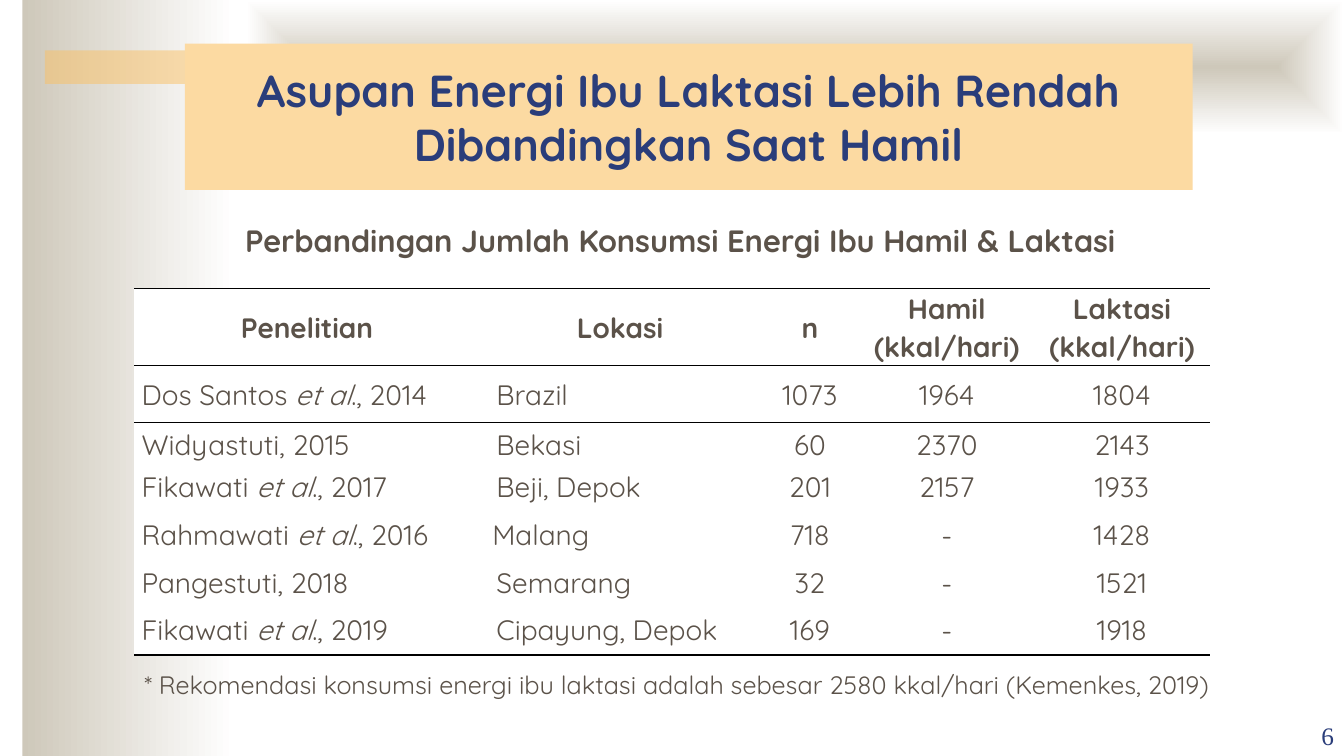
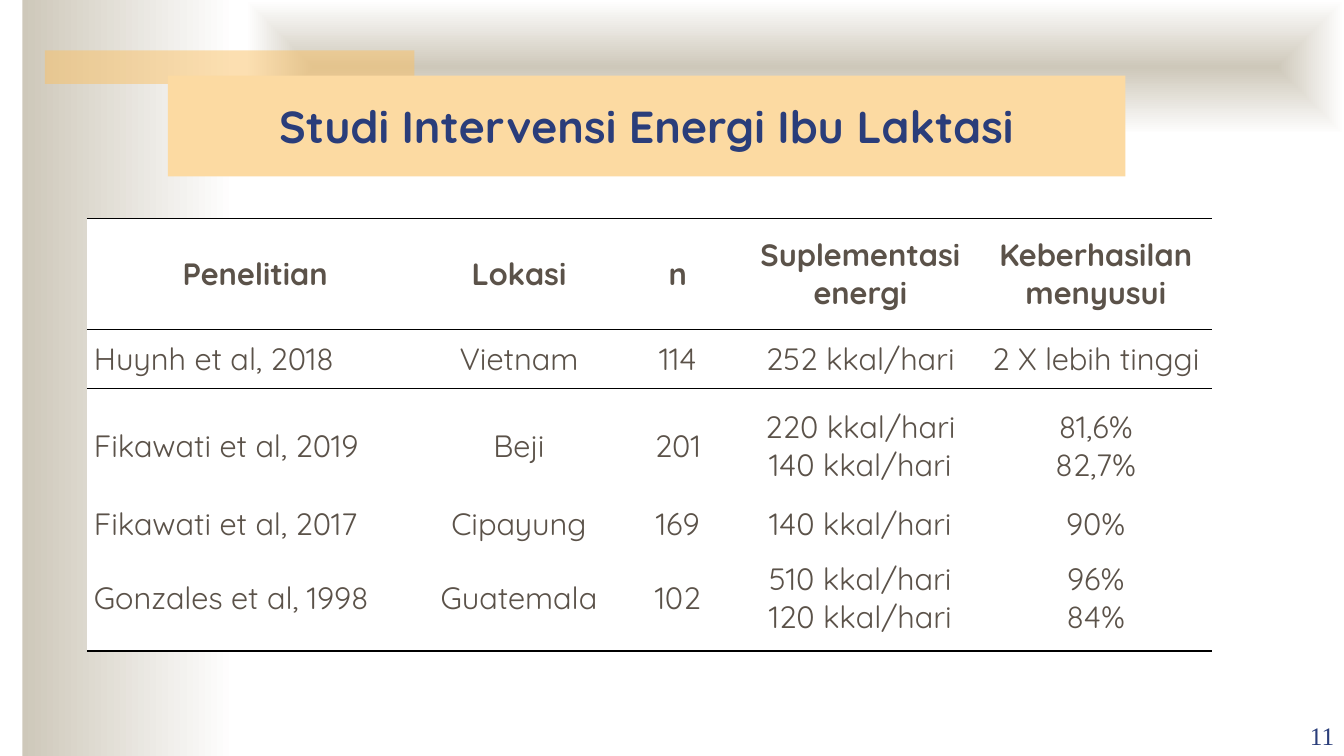
import dataclasses

import pptx
import pptx.dml.color
import pptx.enum.shapes
import pptx.enum.text
import pptx.oxml.ns
import pptx.util
from lxml import etree

RGBColor = pptx.dml.color.RGBColor
Align = pptx.enum.text.PP_ALIGN
Anchor = pptx.enum.text.MSO_ANCHOR
qn = pptx.oxml.ns.qn

# The slide is a grid of 160 columns by 90 rows of square modules
COLUMNS, ROWS = 160, 90
MODULE = pptx.util.Pt(6)

STONE = RGBColor(0xCE, 0xC8, 0xBA)
AMBER = RGBColor(0xFA, 0xC1, 0x64)
PEACH = RGBColor(0xFC, 0xDA, 0xA2)
NAVY = RGBColor(0x2A, 0x3D, 0x7A)
BROWN = RGBColor(0x5B, 0x52, 0x49)
BLACK = RGBColor(0, 0, 0)
WHITE = RGBColor(0xFF, 0xFF, 0xFF)

BODY_FONT = "Quicksand"
NUMBER_FONT = "Times New Roman"
NO_TABLE_STYLE = "{2D5ABB26-0587-4C30-8999-92F81FD0307C}"


@dataclasses.dataclass
class Box:
    left: float
    top: float
    width: float
    height: float

    def place(self):
        return [modules(n) for n in (self.left, self.top, self.width, self.height)]


@dataclasses.dataclass
class Column:
    share: float
    side_inset: float = 0
    align: int = Align.CENTER
    indent: float = 0


def modules(count):
    return pptx.util.Emu(round(count * MODULE))


def add_span(para, text, size, color, font=BODY_FONT, bold=False, italic=False):
    span = para.add_run()
    span.text = text
    span.font.name = font
    span.font.size = pptx.util.Pt(size)
    span.font.color.rgb = color
    span.font.bold = bold
    span.font.italic = italic


def add_band(page, box):
    band = page.shapes.add_shape(pptx.enum.shapes.MSO_SHAPE.RECTANGLE, *box.place())
    band.shadow.inherit = False
    band.line.fill.background()
    return band


def add_solid_band(page, box, color):
    band = add_band(page, box)
    band.fill.solid()
    band.fill.fore_color.rgb = color
    return band


def add_fading_band(page, box):
    band = add_band(page, box)
    band.fill.gradient()
    band.fill.gradient_angle = 0
    for stop, color in zip(band.fill.gradient_stops, (STONE, WHITE)):
        stop.color.rgb = color
    return band


def add_label(page, box, text, size, color, font=BODY_FONT, bold=False,
              align=Align.LEFT, anchor=Anchor.TOP, wrap=True):
    label = page.shapes.add_textbox(*box.place())
    label.text_frame.word_wrap = wrap
    label.text_frame.vertical_anchor = anchor
    para = label.text_frame.paragraphs[0]
    para.alignment = align
    add_span(para, text, size, color, font, bold)


def draw_backdrop(page):
    # Side band fades to the right, top band fades out from its middle
    add_fading_band(page, Box(2.67, 0, 25.33, ROWS))
    top_band = add_fading_band(page, Box(29.33, 0, COLUMNS - 29.33, 16))
    gradient = top_band._element.spPr.find(qn("a:gradFill"))
    gradient.remove(gradient.find(qn("a:lin")))
    outline = etree.SubElement(gradient, qn("a:path"), {"path": "shape"})
    etree.SubElement(outline, qn("a:fillToRect"), dict.fromkeys("ltrb", "50000"))

    # Translucent accent bar
    bar = add_solid_band(page, Box(5.33, 6, 44, 4), AMBER)
    tint = bar._element.spPr.find(qn("a:solidFill"))[0]
    etree.SubElement(tint, qn("a:alpha"), {"val": "50000"})


def draw_title(page, box, text):
    banner = add_solid_band(page, box, PEACH)
    banner.text_frame.word_wrap = True
    banner.text_frame.vertical_anchor = Anchor.MIDDLE
    para = banner.text_frame.paragraphs[0]
    para.alignment = Align.CENTER
    add_span(para, text, 32, NAVY, bold=True)


def draw_page_number(page, number):
    add_label(page, Box(COLUMNS - 16, ROWS - 6, 16, 6), str(number), 18, NAVY,
              font=NUMBER_FONT, align=Align.RIGHT, anchor=Anchor.BOTTOM)


def rule_cell(cell, sides):
    """Draw black one-point rules on the given sides (T, B, in this order)."""
    properties = cell._tc.get_or_add_tcPr()
    for position, side in enumerate(sides):
        line = etree.Element(qn(f"a:ln{side}"), {"w": str(pptx.util.Pt(1))})
        fill = etree.SubElement(line, qn("a:solidFill"))
        etree.SubElement(fill, qn("a:srgbClr"), {"val": str(BLACK)})
        properties.insert(position, line)


def fill_cell(cell, text, column, size, spacing, header, indent):
    cell.fill.solid()
    cell.fill.fore_color.rgb = WHITE
    cell.vertical_anchor = Anchor.MIDDLE
    cell.margin_left = cell.margin_right = modules(column.side_inset)
    cell.margin_top = cell.margin_bottom = 0
    for number, line in enumerate(text.split("\n")):
        frame = cell.text_frame
        para = frame.add_paragraph() if number else frame.paragraphs[0]
        para.alignment = Align.CENTER if header else column.align
        para.line_spacing = spacing
        if indent and not header:
            para._p.get_or_add_pPr().set("marL", str(modules(indent)))
        # Text between asterisks is italic
        for part, words in enumerate(line.split("*")):
            add_span(para, words, size, BROWN, bold=header, italic=part % 2 == 1)


def draw_study_table(page, box, columns, heights, rows, size, spacing, indents=None):
    frame = page.shapes.add_table(len(rows), len(columns), *box.place())
    table = frame.table
    table.first_row = table.horz_banding = False
    table._tbl.tblPr.find(qn("a:tableStyleId")).text = NO_TABLE_STYLE

    # Columns and rows share out the box
    total_width = sum(column.share for column in columns)
    for grid_column, column in zip(table.columns, columns):
        grid_column.width = modules(box.width * column.share / total_width)
    for grid_row, height in zip(table.rows, heights):
        grid_row.height = modules(box.height * height / sum(heights))

    # Rules above and below the header, and below the last row
    rules = {0: "TB", 1: "T", len(rows) - 1: "B"}
    for r, row in enumerate(rows):
        for c, (text, column) in enumerate(zip(row, columns)):
            cell = table.cell(r, c)
            indent = (indents or {}).get((r, c), column.indent)
            fill_cell(cell, text, column, size, spacing, r == 0, indent)
            rule_cell(cell, rules.get(r, ""))


def start_page(deck, title_box, title, number):
    page = deck.slides.add_slide(deck.slide_layouts[6])
    draw_backdrop(page)
    draw_title(page, title_box, title)
    draw_page_number(page, number)
    return page


def build_intake_page(deck):
    page = start_page(deck, Box(22, 5.2, 120, 17.4),
                      "Asupan Energi Ibu Laktasi Lebih Rendah Dibandingkan Saat Hamil", 6)
    add_label(page, Box(28, 25.8, 106.6, 5.6),
              "Perbandingan Jumlah Konsumsi Energi Ibu Hamil & Laktasi",
              22, BROWN, bold=True, wrap=False)
    columns = [
        Column(3.43, 0.85, Align.LEFT),
        Column(2.79, 0, Align.LEFT, indent=2),
        Column(0.98),
        Column(1.74, 0.85),
        Column(1.74, 0.85),
    ]
    rows = [
        ("Penelitian", "Lokasi", "n", "Hamil\n(kkal/hari)", "Laktasi\n(kkal/hari)"),
        ("Dos Santos *et al*., 2014", "Brazil", "1073", "1964", "1804"),
        ("Widyastuti, 2015", "Bekasi", "60", "2370", "2143"),
        ("Fikawati *et al*., 2017", "Beji, Depok", "201", "2157", "1933"),
        ("Rahmawati *et al*., 2016", "Malang", "718", "-", "1428"),
        ("Pangestuti, 2018", "Semarang", "32", "-", "1521"),
        ("Fikawati *et al*., 2019", "Cipayung, Depok", "169", "-", "1918"),
    ]
    heights = [0.77, 0.57, 0.42, 0.42, 0.53, 0.42, 0.52]
    draw_study_table(page, Box(16, 34.3, 128, 43.7), columns, heights, rows,
                     size=20, spacing=1.07, indents={(4, 1): 1.5})
    add_label(page, Box(16, 79, 138, 5),
              "* Rekomendasi konsumsi energi ibu laktasi adalah sebesar "
              "2580 kkal/hari (Kemenkes, 2019)",
              18, BROWN, anchor=Anchor.MIDDLE)


def build_intervention_page(deck):
    page = start_page(deck, Box(20, 9, 114, 12),
                      "Studi Intervensi Energi Ibu Laktasi", 11)
    columns = [Column(3.34, 0.85, Align.LEFT)]
    columns += [Column(share, 0.12) for share in (1.89, 1.26, 2.36, 2.31)]
    rows = [
        ("Penelitian", "Lokasi", "n", "Suplementasi\nenergi", "Keberhasilan menyusui"),
        ("Huynh et al, 2018", "Vietnam", "114", "252 kkal/hari", "2 X lebih tinggi"),
        ("Fikawati et al, 2019", "Beji", "201",
         "220 kkal/hari\n140 kkal/hari", "81,6%\n82,7%"),
        ("Fikawati et al, 2017", "Cipayung", "169", "140 kkal/hari", "90%"),
        ("Gonzales et al, 1998", "Guatemala", "102",
         "510 kkal/hari\n120 kkal/hari", "96%\n84%"),
    ]
    heights = [1.1, 0.59, 1.13, 0.42, 1.05]
    draw_study_table(page, Box(10.33, 26, 134, 51.5), columns, heights, rows,
                     size=22, spacing=1.0)


def main():
    deck = pptx.Presentation()
    deck.slide_width = modules(COLUMNS)
    deck.slide_height = modules(ROWS)
    build_intake_page(deck)
    build_intervention_page(deck)
    deck.save("out.pptx")


if __name__ == "__main__":
    main()
